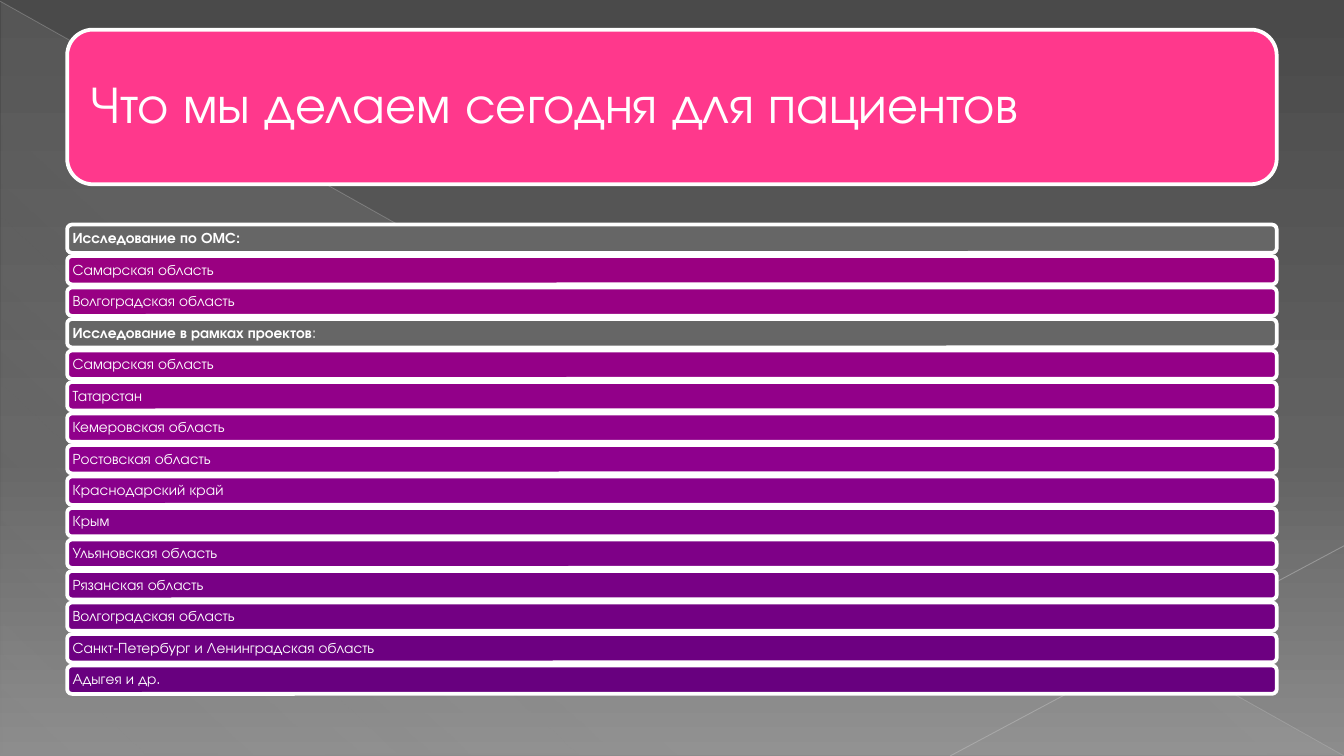
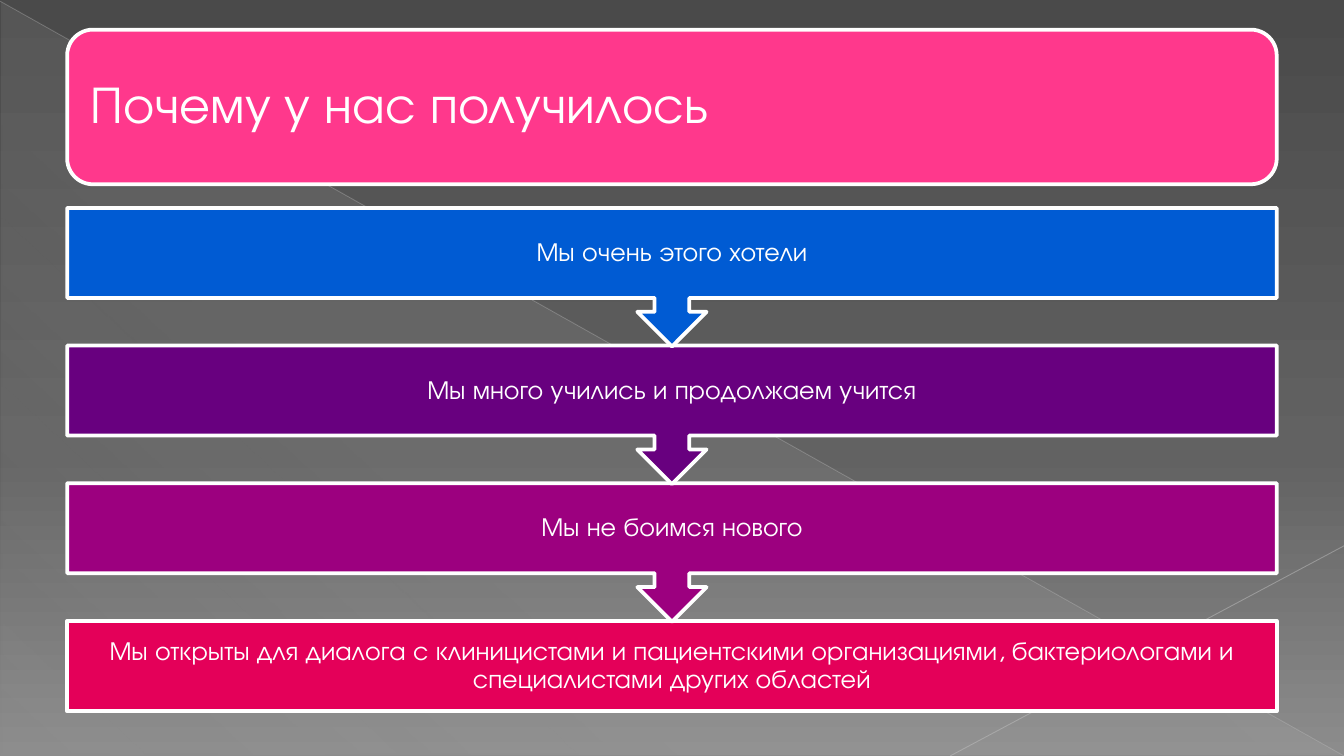
"""Builds two slides on work with patients: a list of regions and a chain of reasons."""
import pptx
import pptx.util
import pptx.dml.color
import pptx.enum.shapes
import pptx.enum.text
import pptx.oxml
import pptx.oxml.ns

Pt, Inches = pptx.util.Pt, pptx.util.Inches
Kind = pptx.enum.shapes.MSO_SHAPE
Align = pptx.enum.text.PP_ALIGN
Font = "TeX Gyre Adventor"
White, Pink, Gray = "FFFFFF", "FF388C", "666666"
Col, Row = 10 / 20, 5.625 / 24
Left, Wide = 1, 18


def tint(text):
    return pptx.dml.color.RGBColor.from_string(text)


def mix(start, end, part):
    pairs = zip(tint(start), tint(end))
    return "".join(f"{round(a + (b - a) * part):02X}" for a, b in pairs)


def fade(node, share):
    alpha = pptx.oxml.ns.qn("a:alpha")
    node.makeelement(alpha)
    pptx.oxml.xmlchemy.OxmlElement("a:alpha")
    item = pptx.oxml.xmlchemy.OxmlElement("a:alpha")
    item.set("val", str(share * 1000))
    node.append(item)


def blend(fill, root, stops, angle):
    fill.gradient()
    node = root.xpath(".//a:gradFill")[0]
    marks = "".join(
        f'<a:gs pos="{pos * 1000}"><a:srgbClr val="{hue}">'
        f'<a:alpha val="{share * 1000}"/></a:srgbClr></a:gs>'
        for pos, hue, share in stops)
    space = pptx.oxml.ns.nsdecls("a")
    for part in list(node):
        node.remove(part)
    node.append(pptx.oxml.parse_xml(f"<a:gsLst {space}>{marks}</a:gsLst>"))
    node.append(pptx.oxml.parse_xml(
        f'<a:lin {space} ang="{angle * 60000}" scaled="0"/>'))


def write(frame, text, tail="", size=14, bold=False, align=Align.LEFT, inset=0.11):
    frame.word_wrap = True
    frame.auto_size = pptx.enum.text.MSO_AUTO_SIZE.NONE
    frame.vertical_anchor = pptx.enum.text.MSO_ANCHOR.MIDDLE
    frame.margin_left = frame.margin_right = Inches(inset)
    frame.margin_top = frame.margin_bottom = Inches(inset)
    line = frame.paragraphs[0]
    line.alignment = align
    line.line_spacing = 0.9
    for words, heavy in ((text, bold), (tail, False)):
        if words:
            run = line.add_run()
            run.text = words
            run.font.name, run.font.size, run.font.bold = Font, Pt(size), heavy
            run.font.color.rgb = tint(White)


class Deck:
    def __init__(self):
        self.show = pptx.Presentation()
        self.show.slide_width = Inches(20 * Col)
        self.show.slide_height = Inches(24 * Row)
        self.base = self.show.slide_layouts[5]
        self.slide = None

    def place(self, col, row, wide, high):
        return (Inches(col * Col), Inches(row * Row),
                Inches(wide * Col), Inches(high * Row))

    def box(self, kind, area, hue):
        shape = self.slide.shapes.add_shape(kind, *self.place(*area))
        shape.shadow.inherit = False
        shape.fill.solid()
        shape.fill.fore_color.rgb = tint(hue)
        shape.line.color.rgb = tint(White)
        shape.line.width = Pt(2)
        return shape

    def rule(self, start, end, hue, width, share):
        ends = self.place(*start, *end)
        line = self.slide.shapes.add_connector(
            pptx.enum.shapes.MSO_CONNECTOR.STRAIGHT, *ends)
        line.line.color.rgb = tint(hue)
        line.line.width = Pt(width)
        props = line._element.spPr
        fade(props.xpath(".//a:srgbClr")[0], share)
        props.append(pptx.oxml.xmlchemy.OxmlElement("a:effectLst"))
        return line

    def decor(self):
        blend(self.base.background.fill, self.base._element,
              [(0, "4A4A4A", 100), (60, "626262", 100), (100, "8C8C8C", 100)], 90)
        wedge = self.box(Kind.RIGHT_TRIANGLE, (0.02, 0.04, 19.96, 23.92), Gray)
        wedge.line.fill.background()
        blend(wedge.fill, wedge._element,
              [(0, "D2D2D2", 10), (70, "D2D2D2", 8), (100, "D2D2D2", 1)], 133)
        long = self.rule((0, 0.04), (20, 24), "BFBFBF", 0.39, 35)
        short = self.rule((20, 17.33), (14.14, 24), "C6C6C6", 0.47, 45)
        for part in (wedge, long, short):
            self.base.shapes._spTree.append(part._element)

    def page(self, title):
        first = self.slide is None
        self.slide = self.show.slides.add_slide(self.base)
        if first:
            self.decor()
        self.box(Kind.ROUNDED_RECTANGLE, (Left, 0.94, Wide, 4.91), Pink)
        head = self.slide.shapes.title
        head.left, head.top, head.width, head.height = self.place(
            Left + 0.11, 1.18, Wide - 0.22, 4.4)
        write(head.text_frame, title, size=28, inset=0.12)
        self.slide.shapes._spTree.append(head._element)

    def bars(self, items, heads, hues):
        half, last = 7, len(items) - 1
        for at, text in enumerate(items):
            if at in heads:
                hue = Gray
            elif at <= half:
                hue = mix(hues[0], hues[1], (at - 1) / (half - 1))
            else:
                hue = mix(hues[1], hues[2], (at - half) / (last - half))
            bar = self.box(Kind.ROUNDED_RECTANGLE, (Left, 7.13 + at, Wide, 0.9), hue)
            write(bar.text_frame, text, tail=heads.get(at, ""), size=8,
                  bold=at in heads, inset=0.03)

    def chain(self, steps):
        last = len(steps) - 1
        for at, (text, hue) in reversed(list(enumerate(steps))):
            kind, high = ((Kind.RECTANGLE, 2.87) if at == last
                          else (Kind.DOWN_ARROW_CALLOUT, 4.4))
            step = self.box(kind, (Left, 6.6 + 4.37 * at, Wide, high), hue)
            write(step.text_frame, text, align=Align.CENTER)


def main():
    deck = Deck()
    deck.page("Что мы делаем сегодня для пациентов")
    deck.bars([
        "Исследование по ОМС:", "Самарская область", "Волгоградская область",
        "Исследование в рамках проектов", "Самарская область", "Татарстан",
        "Кемеровская область", "Ростовская область", "Краснодарский край",
        "Крым", "Ульяновская область", "Рязанская область",
        "Волгоградская область", "Санкт-Петербург и Ленинградская область",
        "Адыгея и др.",
    ], {0: "", 3: ":"}, ("9A0081", "8E008D", "68007F"))
    deck.page("Почему у нас получилось")
    deck.chain([
        ("Мы очень этого хотели", "005BD3"),
        ("Мы много учились и продолжаем учится", "68007F"),
        ("Мы не боимся нового", "9C007F"),
        ("Мы открыты для диалога с клиницистами и пациентскими организациями, "
         "бактериологами и специалистами других областей", "E40059"),
    ])
    deck.show.save("out.pptx")


if __name__ == "__main__":
    main()
